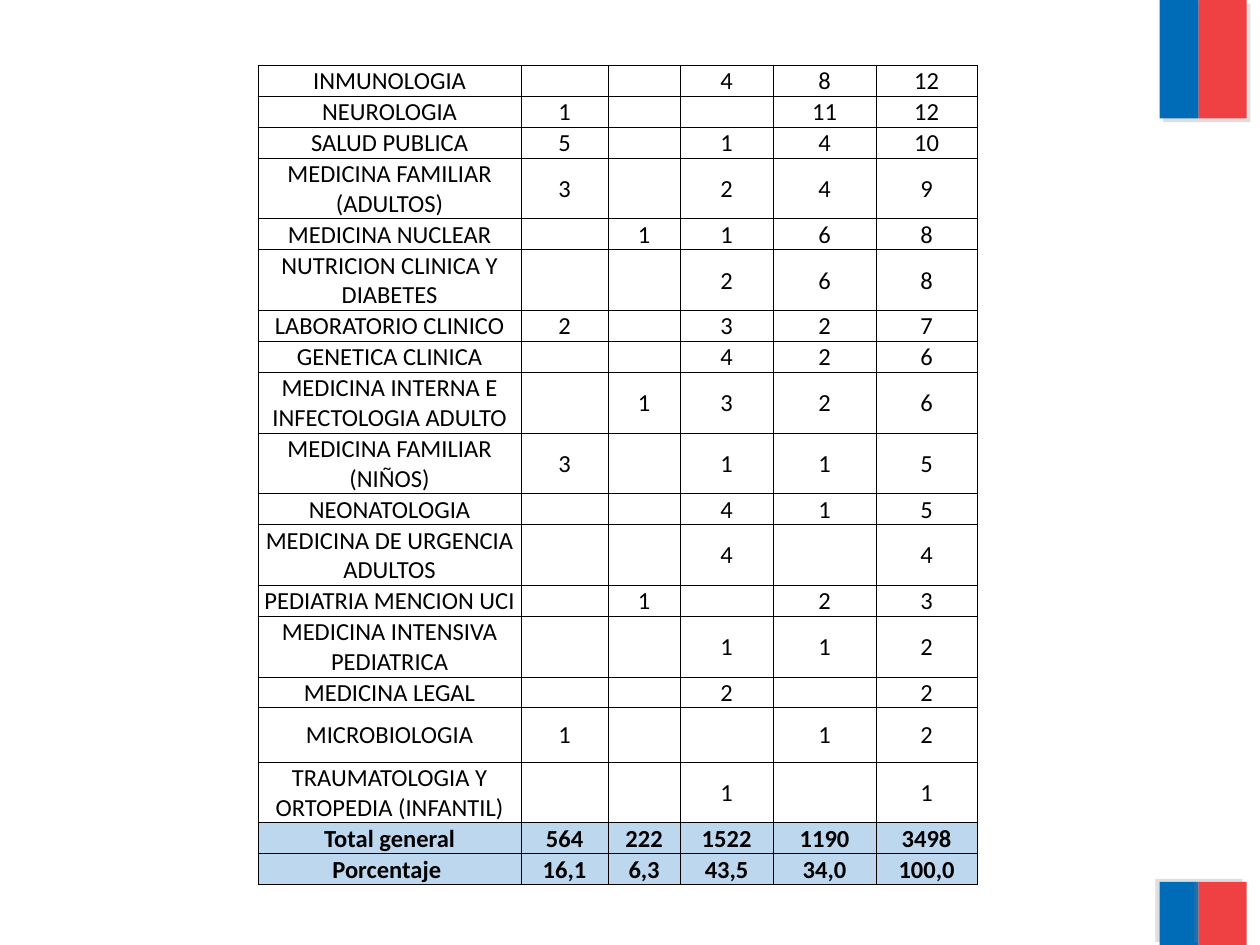
import dataclasses

import lxml.etree
import pptx
import pptx.dml.color
import pptx.enum.shapes
import pptx.enum.text
import pptx.oxml.ns
import pptx.util

Pt = pptx.util.Pt
qn = pptx.oxml.ns.qn

BLUE, RED, BLACK, TOTAL_FILL = "006CB7", "EF4144", "000000", "BDD7EE"
FONT, FONT_SIZE = "Calibri", 14
SINGLE, DOUBLE, TALL = 13.7, 27.4, 31  # row heights
TABLE_LEFT, TABLE_TOP = 147.5, 37.4
COLUMN_WIDTHS = (150.3, 49.7, 41.2, 53.1, 58.9, 57.7)


@dataclasses.dataclass(frozen=True)
class Band:
    left: float
    top: float
    width: float
    height: float
    colour: str
    shadow_angle: int


@dataclasses.dataclass(frozen=True)
class SpecialtyRow:
    name: str
    values: tuple[str, ...]
    height: float = SINGLE
    is_total: bool = False


BANDS = (
    Band(662.6, -0.5, 22.3, 68.2, BLUE, 45),
    Band(684.9, 0, 27.5, 67.7, RED, 45),
    Band(662.6, 504, 22.3, 36, BLUE, 215),
    Band(684.9, 504, 27.5, 36, RED, 215),
)

ROWS = (
    SpecialtyRow("INMUNOLOGIA", ("", "", "4", "8", "12")),
    SpecialtyRow("NEUROLOGIA", ("1", "", "", "11", "12")),
    SpecialtyRow("SALUD PUBLICA", ("5", "", "1", "4", "10")),
    SpecialtyRow("MEDICINA FAMILIAR (ADULTOS)", ("3", "", "2", "4", "9"), DOUBLE),
    SpecialtyRow("MEDICINA NUCLEAR", ("", "1", "1", "6", "8")),
    SpecialtyRow("NUTRICION CLINICA Y DIABETES", ("", "", "2", "6", "8"), DOUBLE),
    SpecialtyRow("LABORATORIO CLINICO", ("2", "", "3", "2", "7")),
    SpecialtyRow("GENETICA CLINICA", ("", "", "4", "2", "6")),
    SpecialtyRow("MEDICINA INTERNA E INFECTOLOGIA ADULTO", ("", "1", "3", "2", "6"), DOUBLE),
    SpecialtyRow("MEDICINA FAMILIAR (NIÑOS)", ("3", "", "1", "1", "5"), TALL),
    SpecialtyRow("NEONATOLOGIA", ("", "", "4", "1", "5")),
    SpecialtyRow("MEDICINA DE URGENCIA ADULTOS", ("", "", "4", "", "4"), DOUBLE),
    SpecialtyRow("PEDIATRIA MENCION UCI", ("", "1", "", "2", "3")),
    SpecialtyRow("MEDICINA INTENSIVA PEDIATRICA", ("", "", "1", "1", "2"), DOUBLE),
    SpecialtyRow("MEDICINA LEGAL", ("", "", "2", "", "2")),
    SpecialtyRow("MICROBIOLOGIA", ("1", "", "", "1", "2"), TALL),
    SpecialtyRow("TRAUMATOLOGIA Y ORTOPEDIA (INFANTIL)", ("", "", "1", "", "1"), DOUBLE),
    SpecialtyRow("Total general", ("564", "222", "1522", "1190", "3498"), is_total=True),
    SpecialtyRow("Porcentaje ", ("16,1", "6,3", "43,5", "34,0", "100,0"), is_total=True),
)


def colour_of(value: str) -> pptx.dml.color.RGBColor:
    return pptx.dml.color.RGBColor.from_string(value)


def add_child(parent, tag: str, **attributes):
    return lxml.etree.SubElement(
        parent, qn(tag), {key: str(value) for key, value in attributes.items()}
    )


def draw_band(page, band: Band) -> None:
    shape = page.shapes.add_shape(
        pptx.enum.shapes.MSO_SHAPE.RECTANGLE,
        Pt(band.left), Pt(band.top), Pt(band.width), Pt(band.height),
    )
    shape.fill.solid()
    shape.fill.fore_color.rgb = colour_of(band.colour)
    shape.line.fill.background()
    shape.shadow.inherit = False
    effects = shape._element.spPr.find(qn("a:effectLst"))
    shadow = add_child(effects, "a:outerShdw", blurRad=0, dist=Pt(3),
                       dir=band.shadow_angle * 60000, algn="ctr", rotWithShape=0)
    tint = add_child(shadow, "a:srgbClr", val="808080")
    add_child(tint, "a:alpha", val=25000)


def draw_borders(cell) -> None:
    properties = cell._tc.get_or_add_tcPr()
    for side in ("a:lnL", "a:lnR", "a:lnT", "a:lnB"):
        line = add_child(properties, side, w=Pt(0.5))
        add_child(add_child(line, "a:solidFill"), "a:srgbClr", val=BLACK)


def fill_cell(cell, text: str, is_total: bool) -> None:
    cell.margin_left = cell.margin_right = cell.margin_top = Pt(0.6)
    cell.margin_bottom = 0
    cell.vertical_anchor = pptx.enum.text.MSO_ANCHOR.MIDDLE
    draw_borders(cell)
    if is_total:
        cell.fill.solid()
        cell.fill.fore_color.rgb = colour_of(TOTAL_FILL)
    else:
        cell.fill.background()

    para = cell.text_frame.paragraphs[0]
    para.alignment = pptx.enum.text.PP_ALIGN.CENTER
    para.font.name = FONT
    para.font.size = Pt(FONT_SIZE)
    para.font.bold = is_total
    para.font.color.rgb = colour_of(BLACK)
    if text:
        para.add_run().text = text
    else:
        # An empty cell takes its line height from the end mark
        add_child(para._p, "a:endParaRPr", sz=FONT_SIZE * 100)


def draw_table(page, rows: tuple[SpecialtyRow, ...]) -> None:
    frame = page.shapes.add_table(
        len(rows), len(COLUMN_WIDTHS), Pt(TABLE_LEFT), Pt(TABLE_TOP),
        Pt(sum(COLUMN_WIDTHS)), Pt(sum(row.height for row in rows)),
    )
    table = frame.table
    table.first_row = table.horz_banding = False
    for column, width in zip(table.columns, COLUMN_WIDTHS):
        column.width = Pt(width)
    for table_row, row in zip(table.rows, rows):
        table_row.height = Pt(row.height)
        for cell, text in zip(table_row.cells, (row.name, *row.values)):
            fill_cell(cell, text, row.is_total)


def main() -> None:
    deck = pptx.Presentation()
    deck.slide_width, deck.slide_height = Pt(720), Pt(540)
    page = deck.slides.add_slide(deck.slide_layouts[6])

    # Corner bands
    for band in BANDS:
        draw_band(page, band)

    # Specialties with totals
    draw_table(page, ROWS)

    deck.save("out.pptx")


if __name__ == "__main__":
    main()
